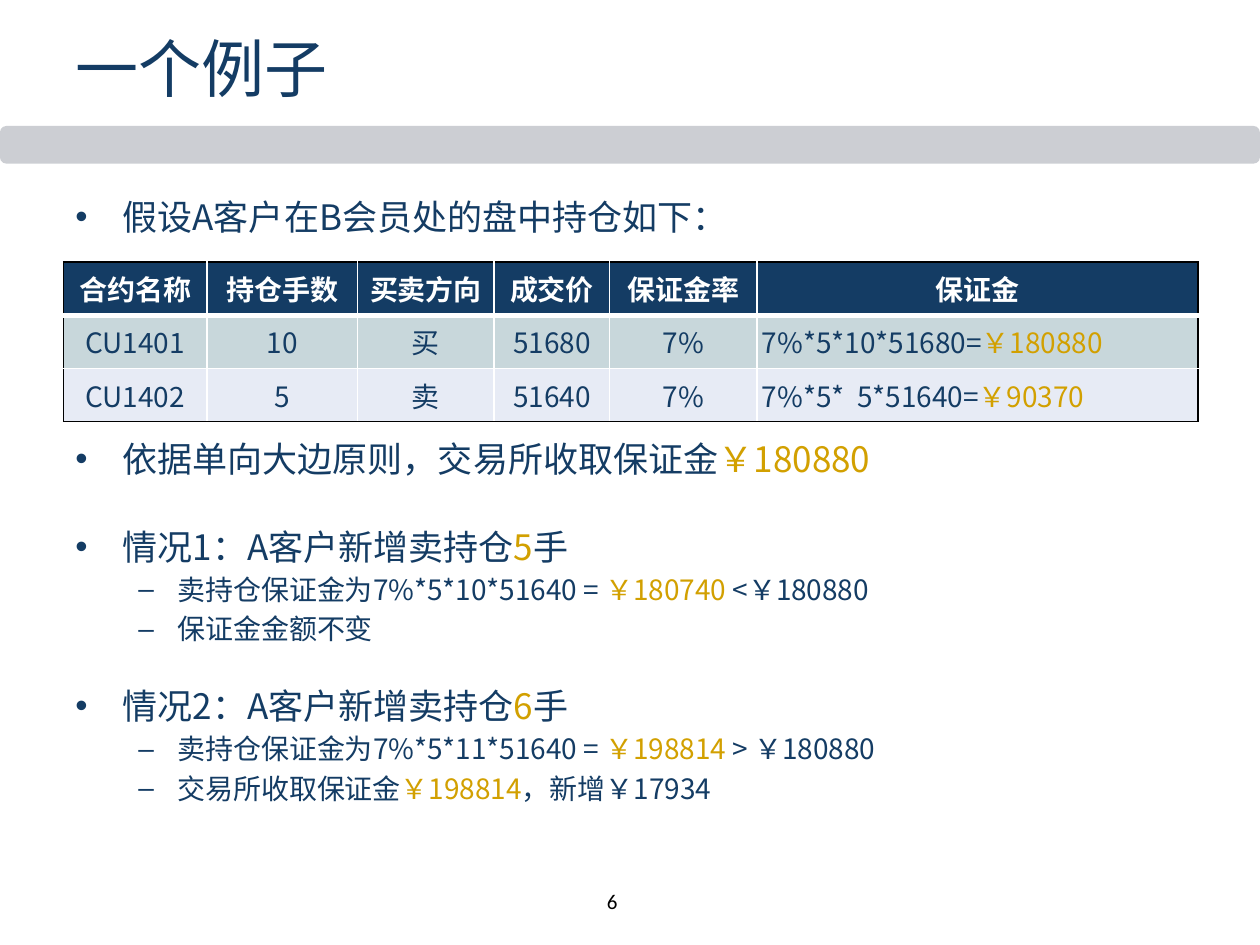
from lxml.etree import SubElement
from pptx import Presentation
from pptx.dml.color import RGBColor
from pptx.enum.shapes import MSO_SHAPE as SHAPE
from pptx.enum.text import MSO_ANCHOR as ANCHOR, MSO_AUTO_SIZE as AUTO, PP_ALIGN as ALIGN
from pptx.oxml.ns import qn
from pptx.util import Cm, Pt

FONT = "Noto Sans CJK SC"
COLORS = {"navy": "143C64", "gold": "D2A000", "bar": "CCCED3", "white": "FFFFFF",
          "black": "000000", "odd": "C8D7DB", "even": "E7EBF5"}
LEVELS = [("•", 0.95, 0.95, 20), ("–", 2.06, 0.79, 16)]
LEFT, WIDTH = 1.27, 22.86

COLUMNS = [2.89, 3.04, 2.75, 2.33, 2.97, 8.89]
ROW_HEIGHT = 1.04
POSITIONS = [
    [["合约名称"], ["持仓手数"], ["买卖方向"], ["成交价"], ["保证金率"], ["保证金"]],
    [["CU1401"], ["10"], ["买"], ["51680"], ["7%"], ["7%*5*10*51680=", "￥180880"]],
    [["CU1402"], ["5"], ["卖"], ["51640"], ["7%"], ["7%*5*  5*51640=", "￥90370"]],
]
BULLETS = [
    (3.81, 1.47, [(0, ["假设A客户在B会员处的盘中持仓如下："])]),
    (8.69, 1.52, [(0, ["依据单向大边原则，交易所收取保证金", "￥180880"])]),
    (10.46, 3.12, [
        (0, ["情况1：A客户新增卖持仓", "5", "手"]),
        (1, ["卖持仓保证金为7%*5*10*51640 = ", "￥180740", " <￥180880"]),
        (1, ["保证金金额不变"])]),
    (13.67, 3.68, [
        (0, ["情况2：A客户新增卖持仓", "6", "手"]),
        (1, ["卖持仓保证金为7%*5*11*51640 = ", "￥198814", " > ￥180880"]),
        (1, ["交易所收取保证金", "￥198814", "，新增￥17934"])]),
]


def rgb(name):
    """Return the named colour."""
    return RGBColor.from_string(COLORS[name])


def add_run(p, text, size, color="navy", bold=False, font=FONT):
    """Add one formatted run to a paragraph."""
    r = p.add_run()
    r.text = text
    r.font.size, r.font.bold, r.font.name = Pt(size), bold, font
    r.font.color.rgb = rgb(color)
    SubElement(r.font._element, qn("a:ea"), typeface=font)


def add_runs(p, parts, size, color="navy", bold=False):
    """Add runs that alternate between the base colour and gold."""
    for i, text in enumerate(parts):
        add_run(p, text, size, "gold" if i % 2 else color, bold)


def add_title(slide, x, y, w, h):
    """Place and fill the title placeholder."""
    sp = slide.shapes.title
    sp.left, sp.top, sp.width, sp.height = Cm(x), Cm(y), Cm(w), Cm(h)
    tf = sp.text_frame
    tf.auto_size, tf.vertical_anchor = AUTO.NONE, ANCHOR.MIDDLE
    p = tf.paragraphs[0]
    p.alignment = ALIGN.LEFT
    add_run(p, "一个例子", 36)


def add_bar(slide, x, y, w, h):
    """Draw the rounded band below the title."""
    sp = slide.shapes.add_shape(SHAPE.ROUNDED_RECTANGLE, Cm(x), Cm(y), Cm(w), Cm(h))
    sp.adjustments[0] = 0.17
    sp.shadow.inherit = False
    sp.fill.solid()
    sp.fill.fore_color.rgb = rgb("bar")
    sp.line.fill.background()


def add_bullets(slide, x, y, w, h, items):
    """Write a list of (level, parts) bullets in a text box."""
    tf = slide.shapes.add_textbox(Cm(x), Cm(y), Cm(w), Cm(h)).text_frame
    tf.word_wrap = True
    for i, (level, parts) in enumerate(items):
        p = tf.add_paragraph() if i else tf.paragraphs[0]
        char, margin, hang, size = LEVELS[level]
        p.level = level
        pPr = p._p.get_or_add_pPr()
        pPr.set("marL", str(Cm(margin)))
        pPr.set("indent", str(-Cm(hang)))
        SubElement(pPr, qn("a:buFont"), typeface="Arial")
        SubElement(pPr, qn("a:buChar"), char=char)
        if i:
            p.space_before = Pt(size * 0.2)
        add_runs(p, parts, size)


def set_borders(cell, row, col, last_row, last_col):
    """Draw a black outer frame and white inner rules."""
    tcPr = cell._tc.get_or_add_tcPr()
    edges = {"L": col == 0, "R": col == last_col, "T": row == 0, "B": row == last_row}
    for side, outer in edges.items():
        heavy = (side, row) in (("B", 0), ("T", 1))
        ln = SubElement(tcPr, qn("a:ln" + side), w=str(Pt(3 if heavy else 1)))
        fill = SubElement(ln, qn("a:solidFill"))
        SubElement(fill, qn("a:srgbClr"), val=COLORS["black" if outer else "white"])


def add_position_table(slide, x, y, rows):
    """Build the table of positions and margins."""
    last_row, last_col = len(rows) - 1, len(COLUMNS) - 1
    table = slide.shapes.add_table(len(rows), len(COLUMNS), Cm(x), Cm(y),
                                   Cm(sum(COLUMNS)), Cm(ROW_HEIGHT * len(rows))).table
    for column, width in zip(table.columns, COLUMNS):
        column.width = Cm(width)
    for i, row in enumerate(rows):
        table.rows[i].height = Cm(ROW_HEIGHT)
        for j, parts in enumerate(row):
            cell = table.cell(i, j)
            set_borders(cell, i, j, last_row, last_col)
            cell.fill.solid()
            cell.fill.fore_color.rgb = rgb(("navy", "odd", "even")[i])
            cell.margin_left = cell.margin_right = Cm(0.1)
            cell.margin_top = cell.margin_bottom = Cm(0.13)
            cell.vertical_anchor = ANCHOR.TOP if i else ANCHOR.MIDDLE
            p = cell.text_frame.paragraphs[0]
            p.alignment = ALIGN.LEFT if i and j == last_col else ALIGN.CENTER
            add_runs(p, parts, 16, "navy" if i else "white", bold=i == 0)


def add_page_number(slide, x, y, w, h):
    """Write the page number."""
    tf = slide.shapes.add_textbox(Cm(x), Cm(y), Cm(w), Cm(h)).text_frame
    tf.word_wrap, tf.vertical_anchor = True, ANCHOR.MIDDLE
    p = tf.paragraphs[0]
    p.alignment = ALIGN.RIGHT
    add_run(p, "6", 12, "black", font="Calibri")


def main():
    """Build and save the slide."""
    prs = Presentation()
    prs.slide_width, prs.slide_height = Cm(25.4), Cm(19.05)
    slide = prs.slides.add_slide(prs.slide_layouts[5])
    add_bar(slide, 0, 2.54, 25.4, 0.76)
    add_title(slide, LEFT, 0.36, WIDTH, 1.98)
    add_position_table(slide, 1.28, 5.28, POSITIONS)
    for top, height, items in BULLETS:
        add_bullets(slide, LEFT, top, WIDTH, height, items)
    add_page_number(slide, 10.59, 17.65, 2.11, 1.02)
    prs.save("out.pptx")


if __name__ == "__main__":
    main()
